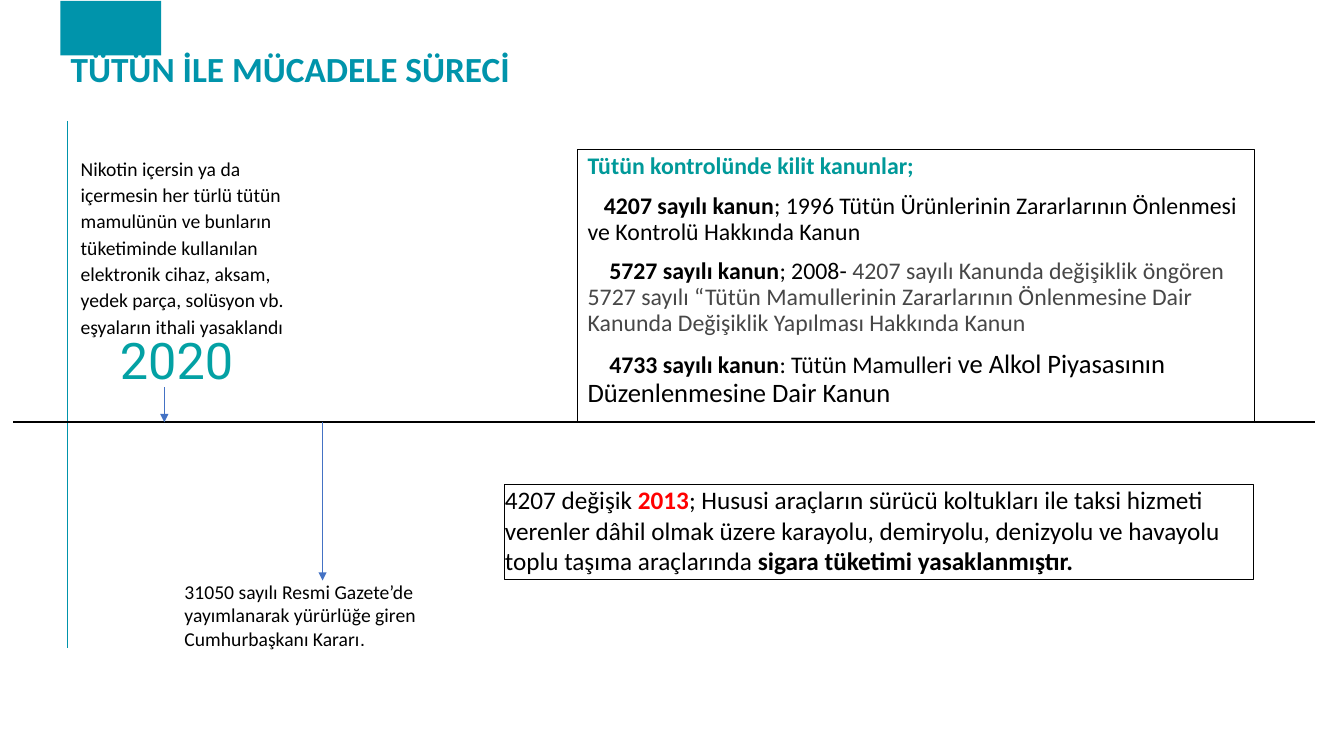
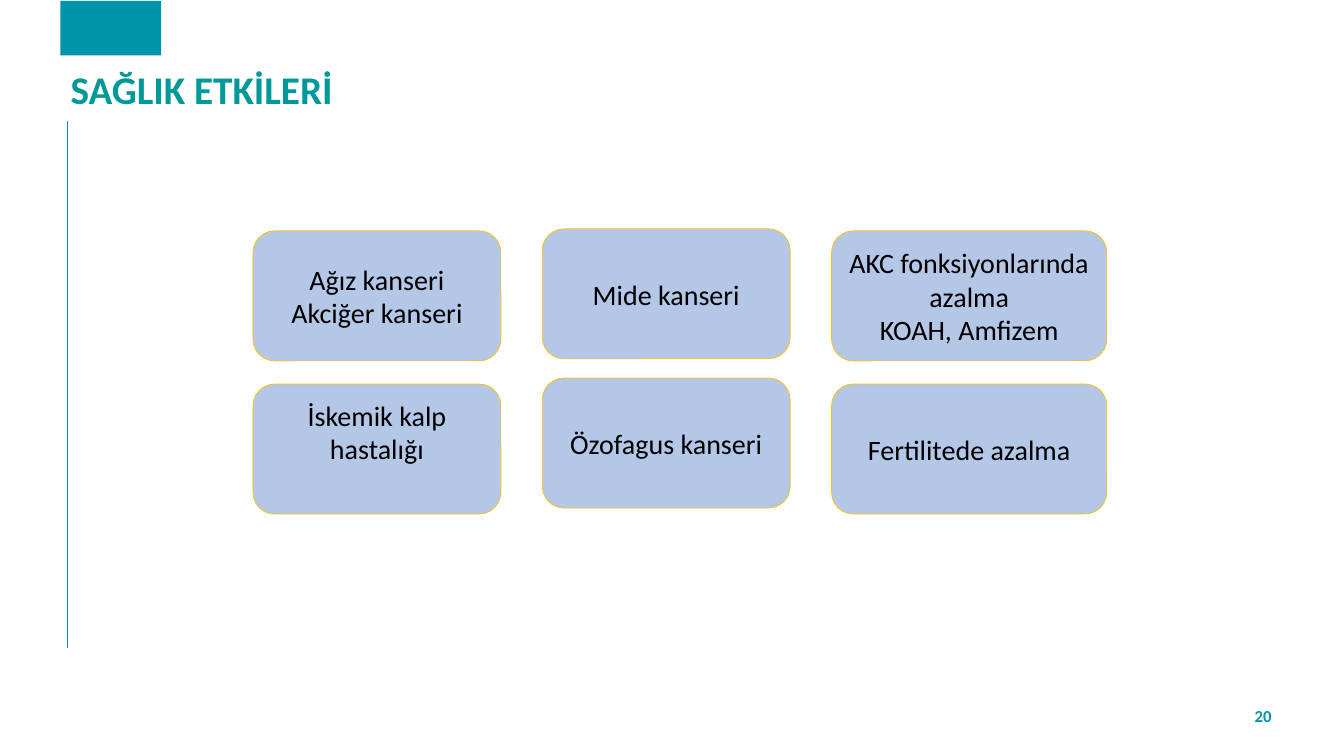
from dataclasses import dataclass

from lxml import etree
from pptx import Presentation
from pptx import util as u
from pptx.dml.color import RGBColor
from pptx.enum import shapes, text
from pptx.oxml import ns


@dataclass(frozen=True)
class Theme:
    teal: str = "0094AB"
    green: str = "009999"
    aqua: str = "03A1A4"
    black: str = "000000"
    gray: str = "474747"
    red: str = "FF0000"
    blue: str = "4472C4"
    pale: str = "B4C7E7"
    gold: str = "FFC000"
    face: str = "Calibri"
    small: float = 12
    note: float = 14
    law: float = 17
    lead: float = 18
    large: float = 19
    card: float = 20
    head: float = 28
    year: float = 36


T = Theme()
BOLD = {"bold": True}
SIDES = ("left", "top", "right", "bottom")


def cell(n):
    return u.Inches(n / 10)


def place(*spots):
    return [cell(n) for n in spots]


def tint(color):
    return RGBColor.from_string(color)


def child(node, name, **attrs):
    return etree.SubElement(node, ns.qn(name), attrs)


def put(frame, paras, size=T.note, color=T.black, bold=False, face=T.face,
        align="LEFT", anchor="TOP", pad=(1, 0.5, 1, 0.5), lead=1.0, gap=0,
        dents=None):
    frame.word_wrap = True
    frame.auto_size = text.MSO_AUTO_SIZE.NONE
    frame.vertical_anchor = text.MSO_ANCHOR[anchor]
    for side, inset in zip(SIDES, pad):
        setattr(frame, "margin_" + side, cell(inset))
    base = dict(size=size, color=color, bold=bold, face=face)
    for i, runs in enumerate(paras):
        para = frame.add_paragraph() if i else frame.paragraphs[0]
        para.alignment = text.PP_ALIGN[align]
        para.line_spacing = lead
        para.space_before = u.Pt(gap if i else 0)
        if dents:
            prop = para._p.get_or_add_pPr()
            prop.set("marL", "0")
            prop.set("indent", str(cell(dents[i])))
            child(prop, "a:buNone")
        for item in [runs] if isinstance(runs, str) else runs:
            words, extra = (item, {}) if isinstance(item, str) else item
            style = base | extra
            run = para.add_run()
            run.text = words
            run.font.size = u.Pt(style["size"])
            run.font.name = style["face"]
            run.font.bold = style["bold"]
            run.font.color.rgb = tint(style["color"])


class Deck:
    def __init__(self):
        self.file = Presentation()
        self.file.slide_width, self.file.slide_height = place(133.33, 75)
        self.slide = None

    def start(self, layout, title, top=6.4, **style):
        self.slide = self.file.slides.add_slide(self.file.slide_layouts[layout])
        self.line(6.7, 12, 6.7, 64.3, T.teal, 1)
        self.shape("RECTANGLE", (6, 0.1, 10, 5.4), fill=T.teal)
        self.fill(0, (6, top, 121.3, 5.5), [title], anchor="MIDDLE",
                  bold=True, lead=0.9, **style)

    def fill(self, slot, spot, paras, **style):
        box = self.slide.placeholders[slot]
        box.left, box.top, box.width, box.height = place(*spot)
        put(box.text_frame, paras, **style)
        return box

    def edge(self, box, color, width=0.75):
        box.line.color.rgb = tint(color)
        box.line.width = u.Pt(width)

    def shape(self, kind, spot, fill=None, edge=None, width=0.75):
        box = self.slide.shapes.add_shape(shapes.MSO_SHAPE[kind], *place(*spot))
        box.shadow.inherit = False
        if fill:
            box.fill.solid()
            box.fill.fore_color.rgb = tint(fill)
        else:
            box.fill.background()
        if edge:
            self.edge(box, edge, width)
        else:
            box.line.fill.background()
        return box

    def label(self, spot, paras, **style):
        box = self.slide.shapes.add_textbox(*place(*spot))
        put(box.text_frame, paras, **style)

    def line(self, x1, y1, x2, y2, color, width, arrow=False):
        link = self.slide.shapes.add_connector(
            shapes.MSO_CONNECTOR.STRAIGHT, *place(x1, y1, x2, y2))
        self.edge(link, color, width)
        if arrow:
            child(link.line._get_or_add_ln(), "a:tailEnd", type="triangle")
        child(link._element.spPr, "a:effectLst")


def laws(deck):
    deck.start(1, "TÜTÜN İLE MÜCADELE SÜRECİ", top=4.3, size=25.2, color=T.teal)
    bare = (0, 0, 0, 0)
    deck.label((8, 15.3, 27.5, 19), [
        "Nikotin içersin ya da",
        "içermesin her türlü tütün",
        "mamulünün ve bunların",
        "tüketiminde kullanılan",
        "elektronik cihaz, aksam,",
        "yedek parça, solüsyon vb.",
        "eşyaların ithali yasaklandı",
    ], pad=bare, lead=u.Pt(18.6), gap=0.2)
    deck.label((11.9, 33.1, 12.8, 6), ["2020"], size=T.year, color=T.aqua,
               face="Roboto", pad=bare, lead=u.Pt(40.2))
    deck.label((18.3, 57.6, 27.1, 7), [
        "31050 sayılı Resmi Gazete’de",
        "yayımlanarak yürürlüğe giren",
        ["Cumhurbaşkanı Kararı", (".", {"face": "Arial"})],
    ], pad=bare, lead=u.Pt(16.2), gap=0.6)
    body = deck.fill(1, (57.3, 14.8, 67.2, 27.1), [
        [("Tütün kontrolünde kilit kanunlar;", BOLD | {"color": T.green})],
        [("4207 sayılı kanun", BOLD),
         "; 1996 Tütün Ürünlerinin Zararlarının Önlenmesi ve Kontrolü "
         "Hakkında Kanun"],
        [("5727 sayılı kanun", BOLD), "; 2008- ",
         ("4207 sayılı Kanunda değişiklik öngören 5727 sayılı “Tütün "
          "Mamullerinin Zararlarının Önlenmesine Dair Kanunda Değişiklik "
          "Yapılması Hakkında Kanun", {"color": T.gray})],
        [("4733 sayılı kanun", BOLD), ": Tütün Mamulleri ",
         ("ve Alkol Piyasasının Düzenlenmesine Dair Kanun",
          {"size": T.large})],
    ], size=T.law, lead=0.9, gap=10, dents=(0, 1.6, 2.14, 2.14))
    deck.edge(body, T.black)
    ban = deck.shape("RECTANGLE", (50.1, 48.1, 74.3, 9.4), edge=T.black)
    put(ban.text_frame, [[
        "4207 değişik ", ("2013", BOLD | {"color": T.red}),
        "; Hususi araçların sürücü koltukları ile taksi hizmeti verenler "
        "dâhil olmak üzere karayolu, demiryolu, denizyolu ve havayolu toplu "
        "taşıma araçlarında ",
        ("sigara tüketimi yasaklanmıştır.", BOLD),
    ]], size=T.lead, pad=bare)
    axis = 41.9
    deck.line(1.3, axis, 130.5, axis, T.black, 1.25)
    deck.line(32, axis, 32, 57.6, T.blue, 0.5, arrow=True)
    deck.line(16.3, 38.4, 16.3, axis, T.blue, 0.5, arrow=True)


def harms(deck):
    deck.start(5, "SAĞLIK ETKİLERİ", size=T.head, color=T.green)
    deck.label((123.3, 67, 4, 8), ["20"], size=T.small, color=T.teal,
               bold=True, align="CENTER", anchor="MIDDLE")
    even = (0.7, 0.4, 0.7, 0.4)
    high = (0.7, 0.4, 0.7, 3.8)
    cols = [
        (22.9, 15.2, 24.6, [(["Ağız kanseri", "Akciğer kanseri"], even),
                            (["İskemik kalp hastalığı"], high)]),
        (22.7, 14.8, 24.6, [(["Mide kanseri"], even),
                            (["Özofagus kanseri"], even)]),
        (22.9, 15.2, 27.3, [(["AKC fonksiyonlarında azalma",
                              "KOAH, Amfizem"], even),
                            (["Fertilitede azalma"], even)]),
    ]
    for col, (top, step, wide, cards) in enumerate(cols):
        for row, (paras, pad) in enumerate(cards):
            spot = (25.1 + 28.7 * col, top + step * row, wide, 12.9)
            card = deck.shape("ROUNDED_RECTANGLE", spot, T.pale, T.gold, 0.5)
            put(card.text_frame, paras, size=T.card, align="CENTER",
                anchor="MIDDLE", pad=pad)


def main():
    deck = Deck()
    laws(deck)
    harms(deck)
    deck.file.save("out.pptx")


if __name__ == "__main__":
    main()
